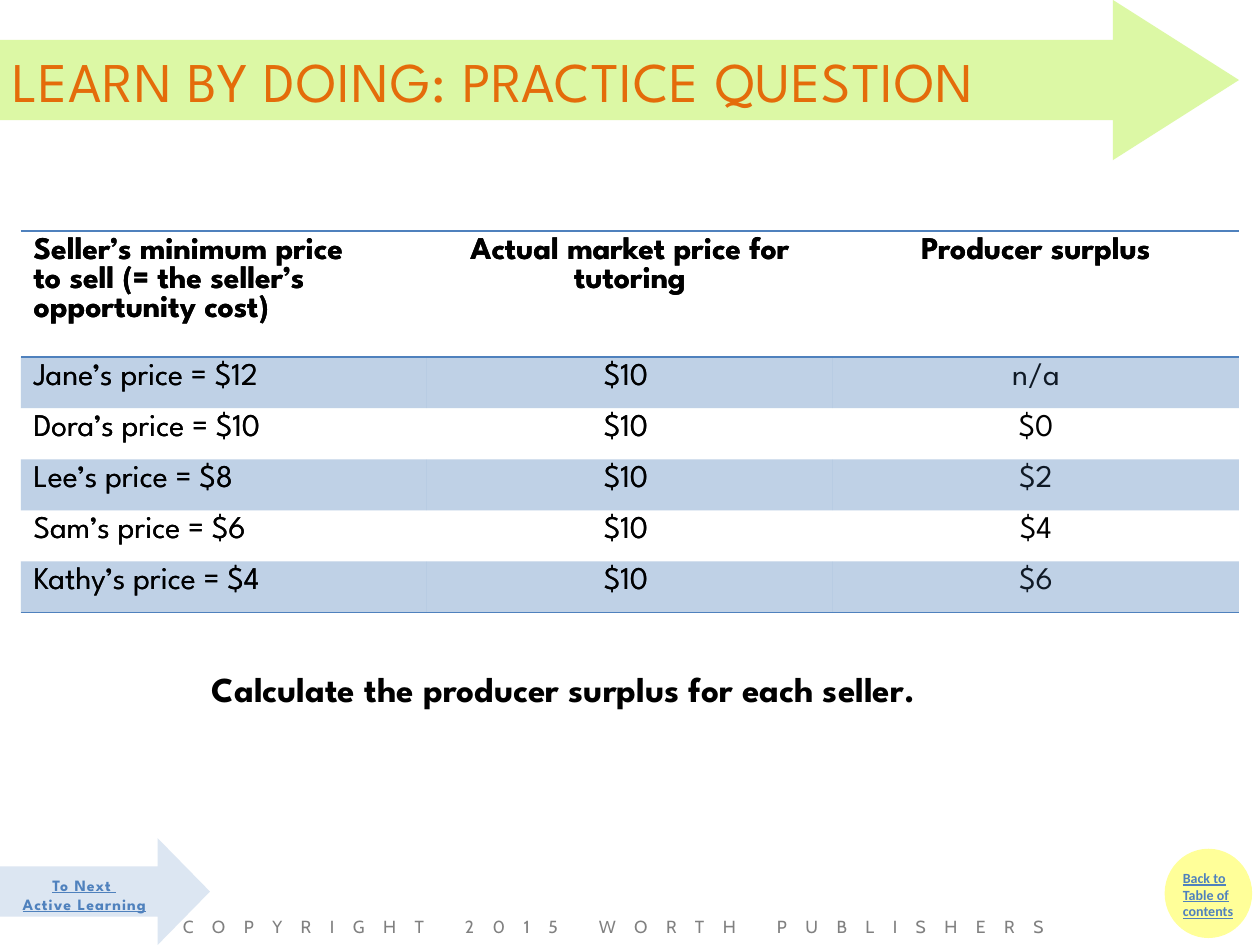
"""Build the producer surplus practice question slide."""
from lxml import etree
from pptx import Presentation
from pptx.dml.color import RGBColor
from pptx.enum.shapes import MSO_SHAPE
from pptx.enum.text import MSO_ANCHOR, PP_ALIGN
from pptx.oxml.ns import qn
from pptx.util import Pt

ARROW, ELLIPSE = MSO_SHAPE.RIGHT_ARROW, MSO_SHAPE.OVAL
LEFT, CENTER = PP_ALIGN.LEFT, PP_ALIGN.CENTER
MIDDLE = MSO_ANCHOR.MIDDLE

LIME = RGBColor(0xCB, 0xF5, 0x77)
ORANGE = RGBColor(0xE4, 0x6C, 0x0A)
YELLOW = RGBColor(0xFF, 0xFF, 0x99)
PALE_BLUE = RGBColor(0xDC, 0xE6, 0xF2)
BLUE = RGBColor(0x4F, 0x81, 0xBD)
GRAY = RGBColor(0x80, 0x80, 0x80)
BLACK = RGBColor(0, 0, 0)

SPARTAN = "League Spartan"
NO_STYLE = "{2D5ABB26-0587-4C30-8999-92F81FD0307C}"
COLUMN_WIDTH, HEADER_HEIGHT, ROW_HEIGHT = 232, 72, 29.2

HEADERS = [
    "Seller’s minimum price\nto sell (= the seller’s opportunity cost)",
    "Actual market price for tutoring\n ",
    "Producer surplus",
]
SELLERS = [
    ("Jane", 12, "n/a"),
    ("Dora", 10, "$0"),
    ("Lee", 8, "$2"),
    ("Sam", 6, "$4"),
    ("Kathy", 4, "$6"),
]


def set_fill(fill, color, opacity=100):
    fill.solid()
    fill.fore_color.rgb = color
    if opacity < 100:
        clr = fill._xPr.find(qn("a:solidFill"))[0]
        etree.SubElement(clr, qn("a:alpha"), val=str(opacity * 1000))


def write(tf, text, size, color, font=SPARTAN, align=LEFT, bold=False,
          underline=False, spacing=0):
    tf.text = text
    for p in tf.paragraphs:
        p.alignment = align
        f = p.font
        f.name, f.size, f.bold, f.underline = font, Pt(size), bold, underline
        f.color.rgb = color
        if spacing:
            for r in p.runs:
                r.font._element.set("spc", str(round(spacing * 100)))


def add_shape(s, kind, box, color, opacity=100, adjustments=()):
    sp = s.shapes.add_shape(kind, *map(Pt, box))
    sp.shadow.inherit = False
    set_fill(sp.fill, color, opacity)
    sp.line.fill.background()
    for i, value in enumerate(adjustments):
        sp.adjustments[i] = value
    return sp


def add_text(s, box, text, size, color, wrap=True, **style):
    tf = s.shapes.add_textbox(*map(Pt, box)).text_frame
    tf.word_wrap = wrap
    write(tf, text, size, color, **style)


def add_border(cell, side):
    ln = etree.SubElement(cell._tc.get_or_add_tcPr(), qn("a:" + side), w=str(Pt(1)))
    fill = etree.SubElement(ln, qn("a:solidFill"))
    etree.SubElement(fill, qn("a:srgbClr"), val=str(BLUE))


def add_surplus_table(s, answers):
    rows = [HEADERS] + [(f"{name}’s price = ${price}", "$10 ",
                         surplus if answers else "")
                        for name, price, surplus in SELLERS]
    last = len(rows) - 1
    frame = s.shapes.add_table(len(rows), len(HEADERS), Pt(12), Pt(132),
                               Pt(COLUMN_WIDTH * len(HEADERS)),
                               Pt(HEADER_HEIGHT + ROW_HEIGHT * last))
    table = frame.table
    table._tbl.tblPr.find(qn("a:tableStyleId")).text = NO_STYLE
    for column in table.columns:
        column.width = Pt(COLUMN_WIDTH)
    for i, values in enumerate(rows):
        table.rows[i].height = Pt(ROW_HEIGHT if i else HEADER_HEIGHT)
        for j, value in enumerate(values):
            cell = table.cell(i, j)
            write(cell.text_frame, value, 18, BLACK,
                  align=CENTER if j else LEFT, bold=i == 0)
            if i == 0:
                add_border(cell, "lnT")
            if i in (0, last):
                add_border(cell, "lnB")
            if i % 2:
                set_fill(cell.fill, BLUE, 20)
            else:
                cell.fill.background()


def main():
    prs = Presentation()
    prs.slide_width, prs.slide_height = Pt(720), Pt(540)
    s = prs.slides.add_slide(prs.slide_layouts[6])

    banner = add_shape(s, ARROW, (0, 0, 708, 91.5), LIME, 66, (0.5, 0.787))
    banner.text_frame.vertical_anchor = MIDDLE
    write(banner.text_frame, "LEARN BY DOING: PRACTICE QUESTION", 32, ORANGE,
          spacing=0.6)

    contents = add_shape(s, ELLIPSE, (666.5, 486, 48, 49), YELLOW)
    contents.line.color.rgb = YELLOW
    contents.line.width = Pt(2)
    add_text(s, (668.8, 493.2, 52, 48), "Back to Table of contents", 8, BLUE,
             font="Calibri", bold=True, underline=True)

    add_shape(s, ARROW, (0, 479, 120, 61), PALE_BLUE, adjustments=(0.47, 0.49))
    add_text(s, (97.4, 519.8, 558.7, 18), "COPYRIGHT 2015 WORTH PUBLISHERS",
             10, GRAY, font="Cabin", spacing=10.6)

    for answers in (True, False):
        add_surplus_table(s, answers)
    add_text(s, (114, 378, 480, 31.7),
             "Calculate the producer surplus for each seller.", 20, BLACK,
             bold=True)
    add_text(s, (2, 496.8, 92.2, 28.8), "To Next \nActive Learning", 9, BLUE,
             wrap=False, align=CENTER, bold=True, underline=True, spacing=0.6)
    prs.save("out.pptx")


if __name__ == "__main__":
    main()
